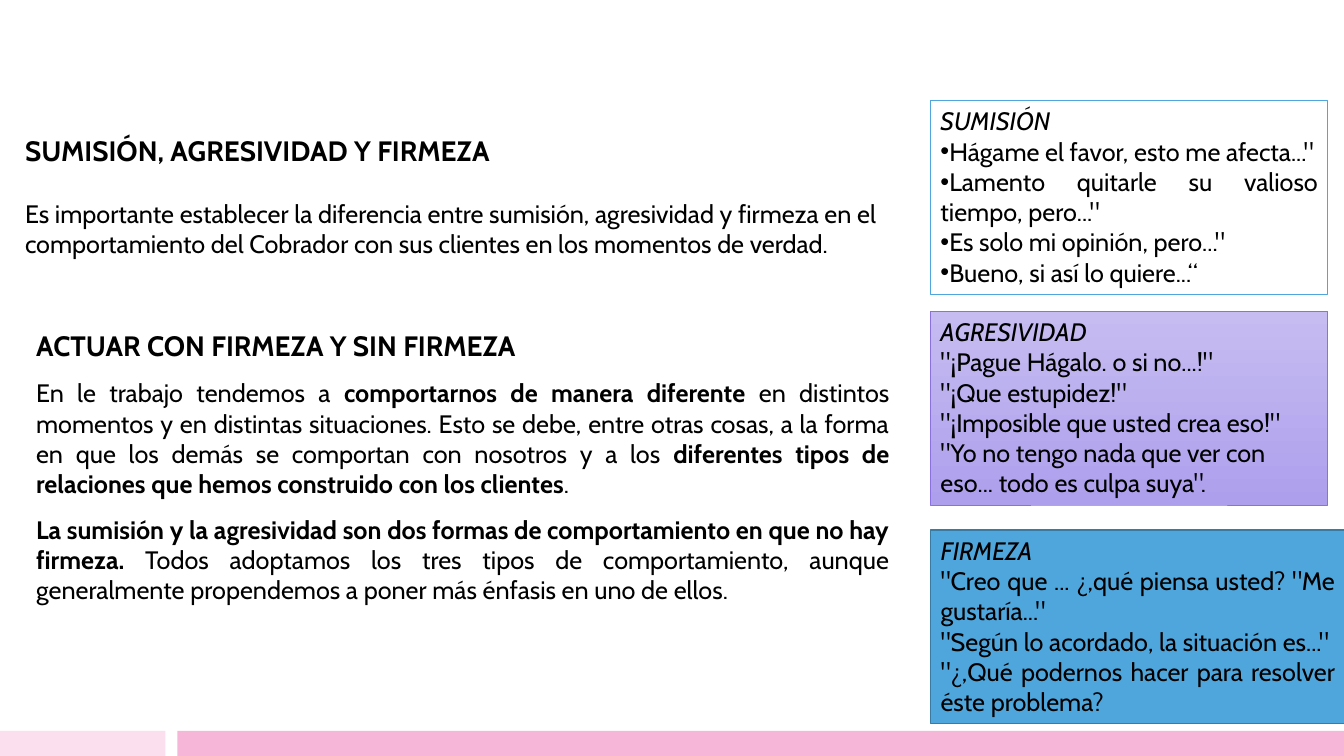
from lxml.etree import SubElement
from pptx import Presentation
from pptx.dml.color import RGBColor
from pptx.enum.shapes import MSO_SHAPE as Kind
from pptx.enum.text import MSO_ANCHOR as Anchor, MSO_AUTO_SIZE as Fit, PP_ALIGN as Align
from pptx.oxml.ns import qn
from pptx.util import Inches, Pt


def tint(code):
    return RGBColor.from_string(code)


def write(frame, paras, align):
    frame.word_wrap = True
    frame.auto_size = Fit.SHAPE_TO_FIT_TEXT
    for n, (runs, size, gap) in enumerate(paras):
        para = frame.paragraphs[0] if n == 0 else frame.add_paragraph()
        para.alignment = align
        if gap:
            para.space_before = Pt(gap)
        for words, style in runs:
            run = para.add_run()
            run.text = words
            font = run.font
            font.name, font.size = "Cabin", Pt(size)
            font.bold, font.italic = style == "b", style == "i"
            font.color.rgb = tint("000000")


deck = Presentation()
deck.slide_width, deck.slide_height = Inches(13.33), Inches(7.5)
slide = deck.slides.add_slide(deck.slide_layouts[6])
shapes = slide.shapes

for left, width, color in [(0, 1.64, "FBDFEE"), (1.76, 11.57, "F5B6D8")]:
    bar = shapes.add_shape(Kind.RECTANGLE, Inches(left), Inches(7.25), Inches(width), Inches(0.25))
    bar.shadow.inherit = False
    bar.fill.solid()
    bar.fill.fore_color.rgb = tint(color)
    bar.line.fill.background()

intro = [
    ([("SUMISIÓN, AGRESIVIDAD Y FIRMEZA", "b")], 20, 0),
    ([("Es importante establecer la diferencia entre sumisión, agresividad y firmeza en el "
       "comportamiento del Cobrador con sus clientes en los momentos de verdad.", "")], 18, 22),
]
body = [
    ([("ACTUAR CON FIRMEZA Y SIN FIRMEZA", "b")], 20, 0),
    ([("En le trabajo tendemos a ", ""),
      ("comportarnos de manera diferente ", "b"),
      ("en distintos momentos y en distintas situaciones. Esto se debe, entre otras cosas, a la "
       "forma en que los demás se comportan con nosotros y a los ", ""),
      ("diferentes tipos de relaciones que hemos construido con los clientes", "b"),
      (".", "")], 18, 11),
    ([("La sumisión y la agresividad son dos formas de comportamiento en que no hay firmeza.", "b"),
      (" Todos adoptamos los tres tipos de comportamiento, aunque generalmente propendemos a poner "
       "más énfasis en uno de ellos.", "")], 18, 11),
]
for left, top, height, paras, align in [
    (0.15, 1.27, 1.35, intro, Align.LEFT),
    (0.26, 3.2, 2.86, body, Align.JUSTIFY),
]:
    box = shapes.add_textbox(Inches(left), Inches(top), Inches(8.66), Inches(height))
    box.text_frame.vertical_anchor = Anchor.MIDDLE
    write(box.text_frame, paras, align)

cards = [
    (1, 3.94, ["FFFFFF"], "4EA6DC", 1, Align.JUSTIFY, "•", [
        "SUMISIÓN",
        "Hágame el favor, esto me afecta...\"",
        "Lamento quitarle su valioso tiempo, pero...\"",
        "Es solo mi opinión, pero...\"",
        "Bueno, si así lo quiere...“"]),
    (3.09, 3.94, ["C6BCF1", "AE9FED"], "8971E1", 0.5, Align.LEFT, "", [
        "AGRESIVIDAD",
        "\"¡Pague Hágalo. o si no...!\"",
        "\"¡Que estupidez!\"",
        "\"¡Imposible que usted crea eso!\"",
        "\"Yo no tengo nada que ver con eso... todo es culpa suya\"."]),
    (5.26, 4.11, ["4EA6DC"], "3A7BA3", 1, Align.JUSTIFY, "", [
        "FIRMEZA",
        "\"Creo que ... ¿,qué piensa usted? \"Me gustaría...\"",
        "\"Según lo acordado, la situación es...\"",
        "\"¿,Qué podernos hacer para resolver éste problema?"]),
]
for top, width, fills, edge, weight, align, mark, lines in cards:
    card = shapes.add_shape(Kind.RECTANGLE, Inches(9.23), Inches(top), Inches(width), Inches(1.92))
    card.shadow.inherit = False
    if len(fills) == 1:
        card.fill.solid()
        card.fill.fore_color.rgb = tint(fills[0])
    else:
        card.fill.gradient()
        card.fill.gradient_angle = 270
        for stop, color, place in zip(card.fill.gradient_stops, fills, (0, 1)):
            stop.color.rgb = tint(color)
            stop.position = place
    card.line.color.rgb = tint(edge)
    card.line.width = Pt(weight)
    frame = card.text_frame
    frame.vertical_anchor = Anchor.TOP
    write(frame, [([(line, "" if n else "i")], 18, 0) for n, line in enumerate(lines)], align)
    if mark:
        for para in frame.paragraphs[1:]:
            props = para._p.get_or_add_pPr()
            props.set("marL", "0")
            props.set("indent", "0")
            SubElement(props, qn("a:buFont")).set("typeface", "Arial")
            SubElement(props, qn("a:buChar")).set("char", mark)

deck.save("out.pptx")
